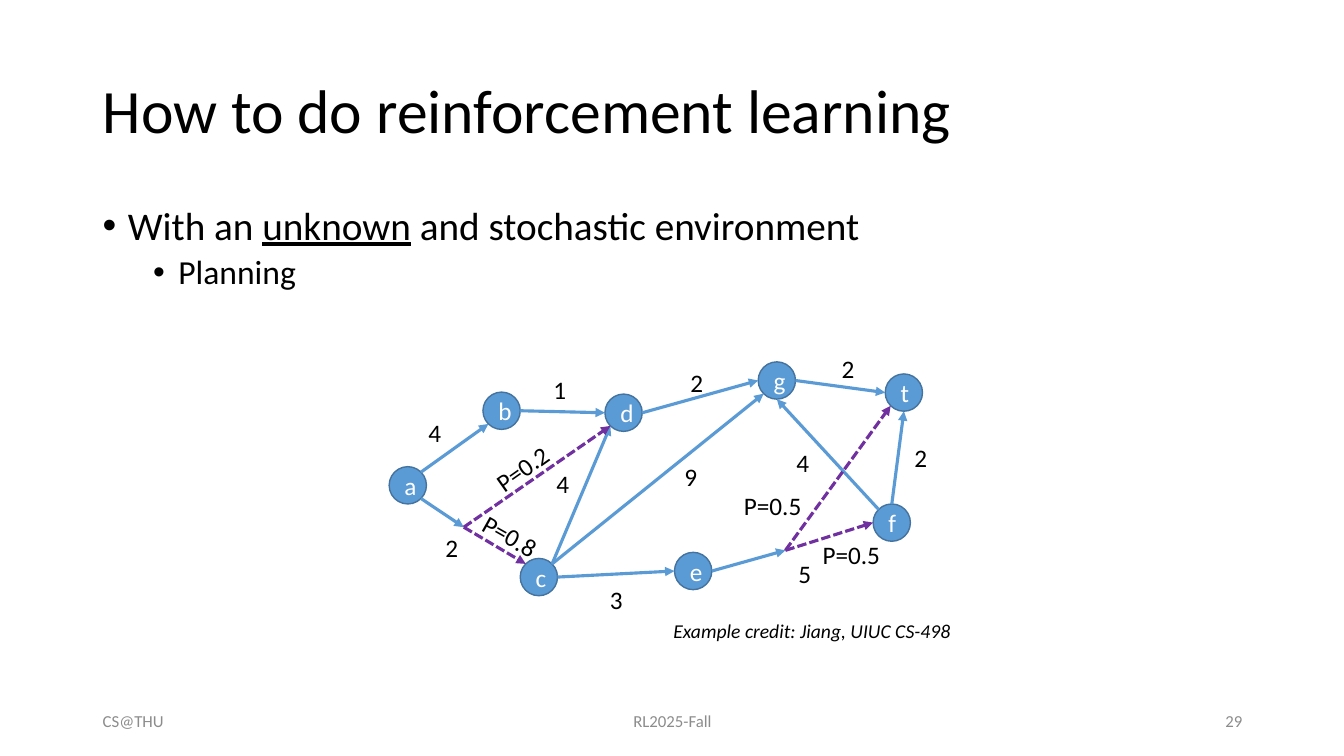
from math import sqrt

from lxml.etree import SubElement
from pptx import Presentation
from pptx.dml.color import RGBColor
from pptx.enum.dml import MSO_LINE
from pptx.enum.shapes import MSO_CONNECTOR, MSO_SHAPE
from pptx.enum.text import MSO_ANCHOR, PP_ALIGN
from pptx.oxml.ns import qn
from pptx.util import Inches, Pt

BLACK = RGBColor(0x00, 0x00, 0x00)
WHITE = RGBColor(0xFF, 0xFF, 0xFF)
GRAY = RGBColor(0x8C, 0x8C, 0x8C)
BLUE = RGBColor(0x5B, 0x9B, 0xD5)
DARK_BLUE = RGBColor(0x43, 0x73, 0x9E)
PURPLE = RGBColor(0x70, 0x30, 0xA0)

DIAMETER = 0.37
DIAGONAL = sqrt(0.5)
COMPASS = {
    "N": (0, -1), "S": (0, 1), "W": (-1, 0), "E": (1, 0),
    "NW": (-DIAGONAL, -DIAGONAL), "NE": (DIAGONAL, -DIAGONAL),
    "SW": (-DIAGONAL, DIAGONAL), "SE": (DIAGONAL, DIAGONAL),
}

STATES = {
    "b": (4.79, 3.89), "d": (6, 3.91), "a": (3.86, 4.63), "e": (6.69, 5.48),
    "c": (5.16, 5.54), "f": (8.66, 5), "g": (7.52, 3.59), "t": (8.78, 3.71),
}
A_BRANCH = (4.6, 5.23)
E_BRANCH = (7.79, 5.46)

CERTAIN_MOVES = [
    ("a NE", "b SW"), ("a SE", A_BRANCH), ("b E", "d W"), ("f NW", "g S"),
    ("d E", "g W"), ("c E", "e W"), ("e E", E_BRANCH), ("c NE", "d SW"),
    ("f N", "t S"), ("g E", "t W"), ("c NE", "g SW"),
]
CHANCE_MOVES = [
    (A_BRANCH, "d SW"), (A_BRANCH, "c NW"), (E_BRANCH, "t SW"), (E_BRANCH, "f W"),
]
COSTS = [
    ("4", 4.15, 4.09), ("2", 4.32, 5.23), ("1", 5.39, 3.66), ("4", 5.42, 4.6),
    ("3", 5.95, 5.75), ("5", 7.82, 5.49), ("2", 6.75, 3.59), ("4", 7.8, 4.39),
    ("2", 8.97, 4.34), ("2", 8.25, 3.46), ("9", 6.69, 4.53),
]
CHANCES = [
    ("P=0.2", 4.77, 4.37, 324.8), ("P=0.8", 4.66, 5.18, 29.5),
    ("P=0.5", 7.28, 4.82, 0), ("P=0.5", 8.06, 5.3, 0),
]
FOOTERS = [
    ("CS@THU", 0.92, 3, PP_ALIGN.LEFT),
    ("RL2025-Fall", 4.42, 4.5, PP_ALIGN.CENTER),
    ("29", 9.42, 3, PP_ALIGN.RIGHT),
]


def write(paragraph, text, size=18, color=BLACK, italic=None, underline=None):
    run = paragraph.add_run()
    run.text = text
    run.font.name = "Calibri"
    run.font.size = Pt(size)
    run.font.color.rgb = color
    run.font.italic = italic
    run.font.underline = underline


def endpoint(place):
    if isinstance(place, tuple):
        return place
    state, side = place.split()
    radius = DIAMETER / 2
    return tuple(corner + radius + radius * step
                 for corner, step in zip(STATES[state], COMPASS[side]))


class SlideBuilder:
    def __init__(self, slide):
        self.shapes = slide.shapes

    def frame(self, left, top, width, height, anchor=MSO_ANCHOR.TOP, rotation=0):
        box = self.shapes.add_textbox(
            Inches(left), Inches(top), Inches(width), Inches(height))
        box.rotation = rotation
        box.text_frame.word_wrap = True
        box.text_frame.vertical_anchor = anchor
        return box.text_frame

    def label(self, text, left, top, width, height, anchor=MSO_ANCHOR.TOP,
              align=PP_ALIGN.LEFT, rotation=0, line_spacing=None, **text_format):
        paragraph = self.frame(left, top, width, height, anchor, rotation).paragraphs[0]
        paragraph.alignment = align
        paragraph.line_spacing = line_spacing
        write(paragraph, text, **text_format)

    def bullet(self, paragraph, pieces, size, margin, level=0):
        properties = paragraph._p.get_or_add_pPr()
        properties.set("marL", str(Inches(margin)))
        properties.set("indent", str(Inches(-0.25)))
        SubElement(properties, qn("a:buFont"), typeface="Arial")
        SubElement(properties, qn("a:buChar"), char="•")
        paragraph.level = level
        paragraph.line_spacing = 0.9
        for text, underline in pieces:
            write(paragraph, text, size=size, underline=underline)

    def state(self, name, left, top):
        circle = self.shapes.add_shape(
            MSO_SHAPE.OVAL, Inches(left), Inches(top), Inches(DIAMETER), Inches(DIAMETER))
        circle.shadow.inherit = False
        circle.fill.solid()
        circle.fill.fore_color.rgb = BLUE
        circle.line.color.rgb = DARK_BLUE
        circle.line.width = Pt(1)
        circle.text_frame.vertical_anchor = MSO_ANCHOR.MIDDLE
        paragraph = circle.text_frame.paragraphs[0]
        paragraph.alignment = PP_ALIGN.CENTER
        write(paragraph, name, color=WHITE)

    def arrow(self, start, end, color, dash=None):
        ends = [Inches(value) for place in (start, end) for value in endpoint(place)]
        move = self.shapes.add_connector(MSO_CONNECTOR.STRAIGHT, *ends)
        move.line.color.rgb = color
        move.line.width = Pt(2.25)
        move.line.dash_style = dash
        SubElement(move.line._get_or_add_ln(), qn("a:tailEnd"), type="triangle")
        SubElement(move._element.spPr, qn("a:effectLst"))


def main():
    presentation = Presentation()
    presentation.slide_width = Inches(13.33)
    presentation.slide_height = Inches(7.5)
    builder = SlideBuilder(presentation.slides.add_slide(presentation.slide_layouts[6]))

    builder.label("How to do reinforcement learning", 0.92, 0.4, 11.5, 1.45,
                  anchor=MSO_ANCHOR.MIDDLE, line_spacing=0.9, size=44)
    body = builder.frame(0.92, 2, 11.5, 1.2)
    environment = [("With an ", None), ("unknown", True),
                   (" and stochastic environment", None)]
    builder.bullet(body.paragraphs[0], environment, size=28, margin=0.25)
    planning = body.add_paragraph()
    builder.bullet(planning, [("Planning", None)], size=24, margin=0.75, level=1)
    planning.space_before = Pt(5)

    for text, left, width, align in FOOTERS:
        builder.label(text, left, 6.95, width, 0.4, anchor=MSO_ANCHOR.MIDDLE,
                      align=align, size=12, color=GRAY)

    for name, (left, top) in STATES.items():
        builder.state(name, left, top)
    for cost, left, top in COSTS:
        builder.label(cost, left, top, 0.56, 0.4)
    builder.label("Example credit: Jiang, UIUC CS-498", 6.58, 6.09, 3.03, 0.34,
                  size=14, italic=True)
    for start, end in CERTAIN_MOVES:
        builder.arrow(start, end, BLUE)
    for start, end in CHANCE_MOVES:
        builder.arrow(start, end, PURPLE, dash=MSO_LINE.SQUARE_DOT)
    for chance, left, top, rotation in CHANCES:
        builder.label(chance, left, top, 1.03, 0.4, rotation=rotation)

    presentation.save("out.pptx")


if __name__ == "__main__":
    main()
